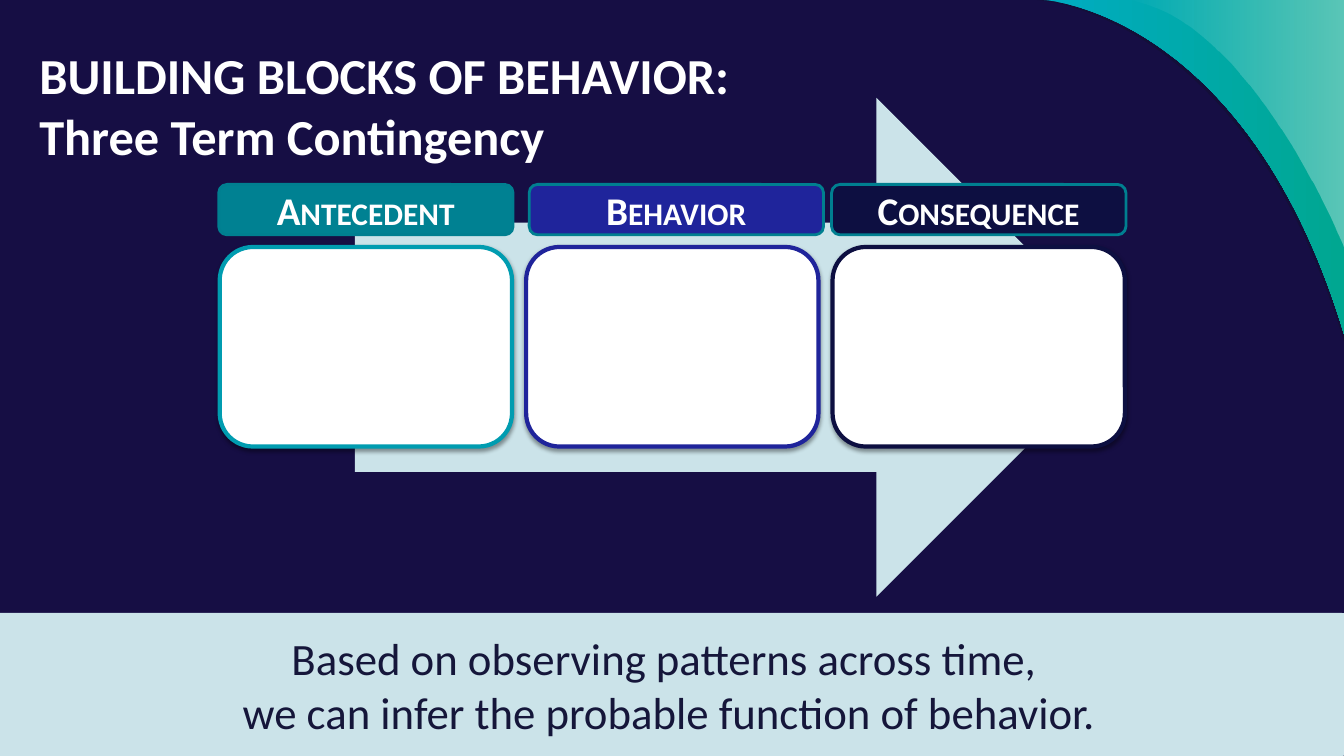
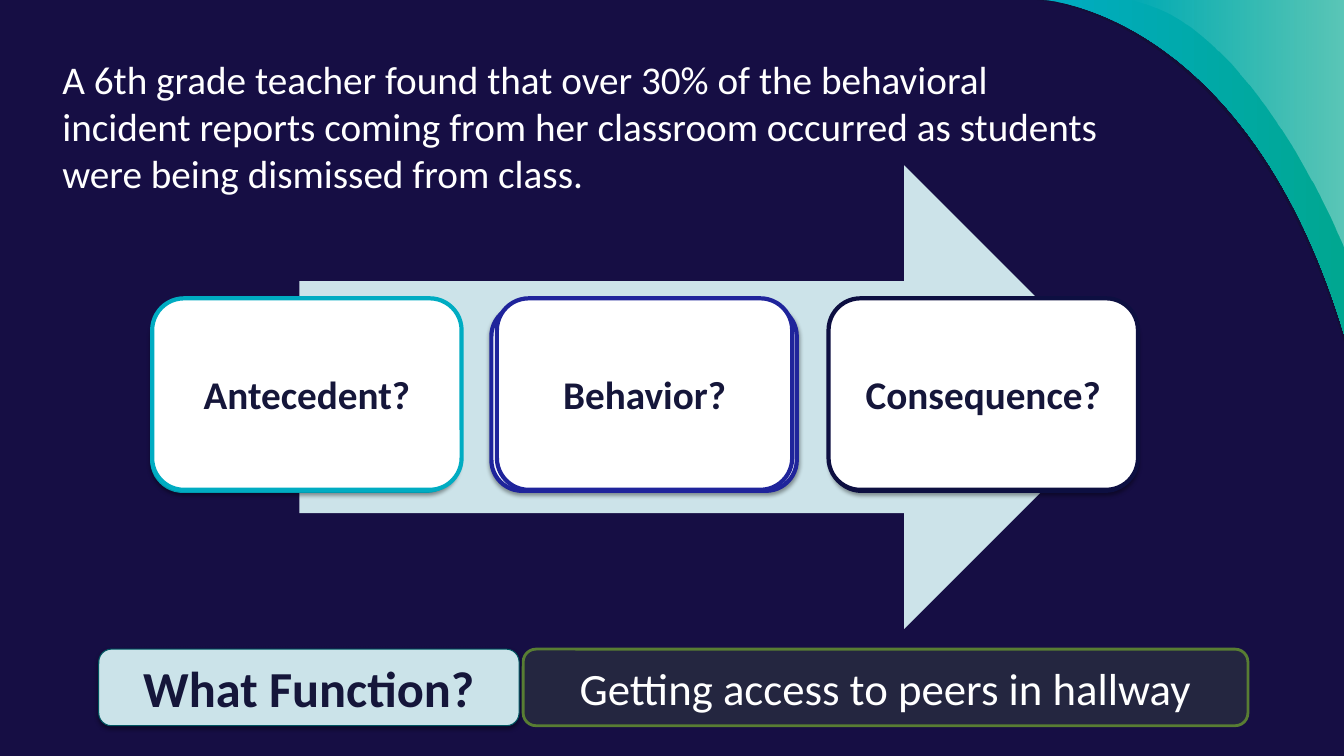
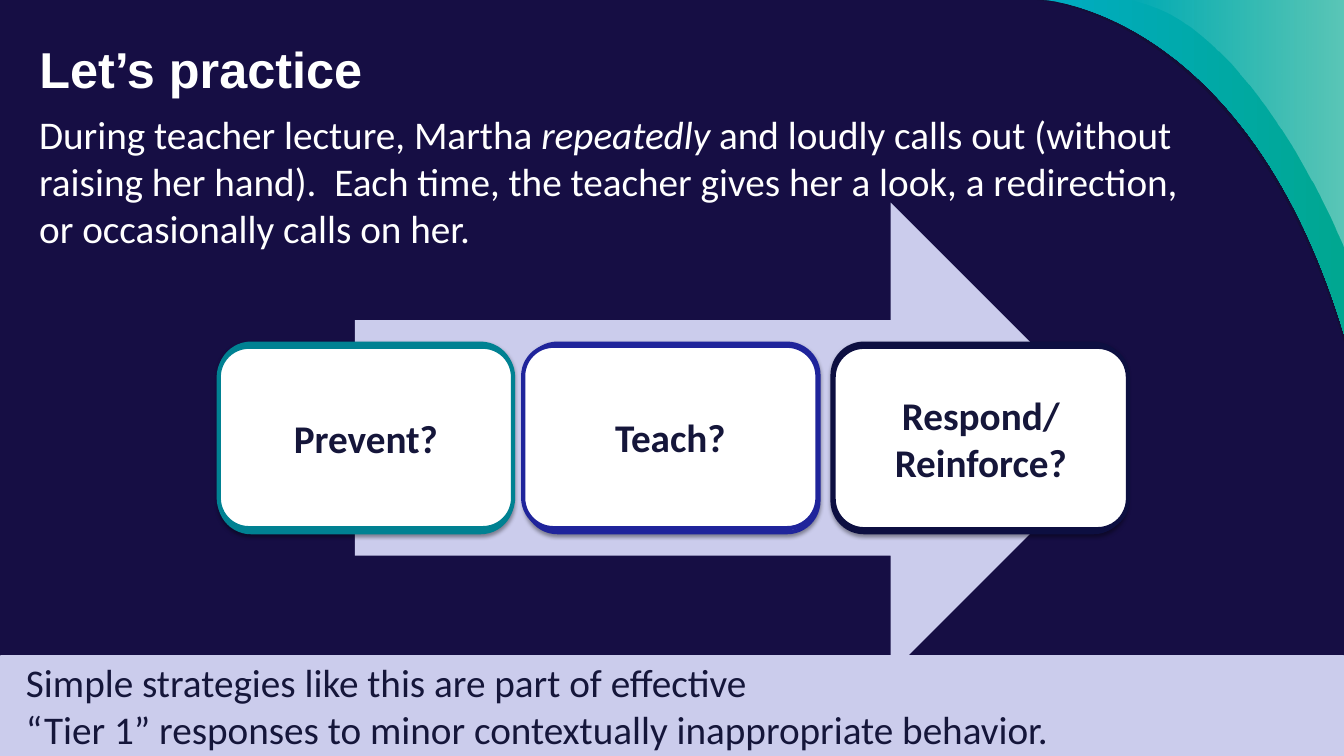
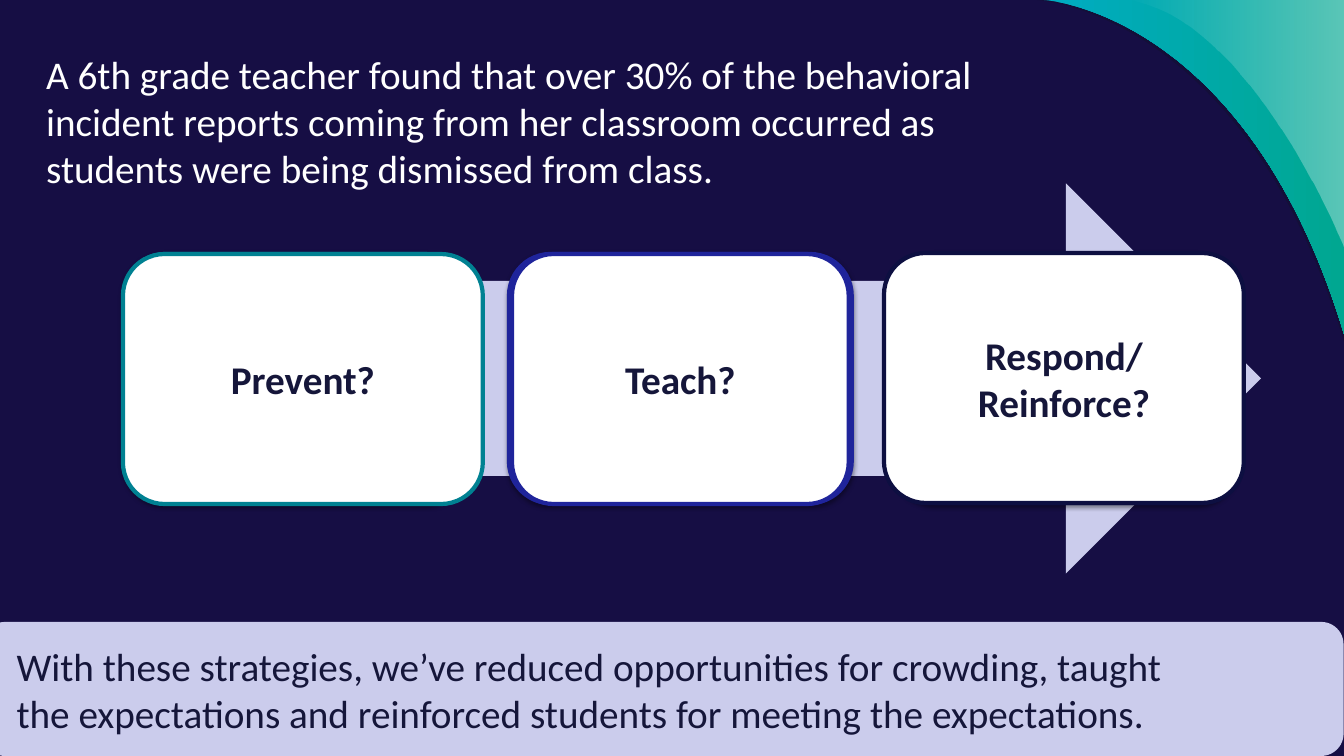
from dataclasses import dataclass

from lxml.etree import SubElement
from pptx import Presentation
from pptx.dml.color import RGBColor
from pptx.enum.shapes import MSO_SHAPE as Shape
from pptx.enum.text import MSO_ANCHOR as Anchor, MSO_AUTO_SIZE as AutoSize, PP_ALIGN as Align
from pptx.oxml.ns import qn
from pptx.util import Pt

PX = 9144  # EMU in one px, 100 px to the inch
WIDTH, HEIGHT = 1333.33, 750
TITLE_ONLY, BLANK = 5, 6


@dataclass(frozen=True)
class TextStyle:
    size: int
    color: str
    bold: bool = False
    font: str = "Calibri"
    small_caps: bool = False


class Theme:
    night, ink, white, black = "160E44", "15163A", "FFFFFF", "000000"
    aqua, sea, teal, teal_edge = "00ACC2", "009CB0", "008192", "007F90"
    green, blue, navy = "00A791", "1F249B", "0D0F41"
    ice, ice_arrow, lilac = "CBE3E9", "CCE3E9", "CBCCEC"
    pine, moss, curve_shade = "005661", "587D33", "12102F"

    title = TextStyle(36, white, bold=True)
    plain_title = TextStyle(36, white, bold=True, font="Arial")
    scenario = TextStyle(28, white)
    card = TextStyle(28, ink, bold=True)
    heading = TextStyle(28, white, bold=True, small_caps=True)
    question = TextStyle(36, ink, bold=True)
    answer = TextStyle(32, white)
    summary = TextStyle(32, ink)
    note = TextStyle(28, ink)


# Corner swoosh: four Bezier points, then (color, opacity in percent) per gradient stop
CURVES = [
    ([(WIDTH, 339), (1235, 11), (1029, 0), (1029, 0)], [(Theme.curve_shade, 54)]),
    ([(WIDTH, 331), (1237, 11), (1036, 0), (1036, 0)], [(Theme.aqua, 100), (Theme.green, 100)]),
    ([(WIDTH, 245), (WIDTH, 245), (1241, 15), (1116, 0)], [(Theme.white, 0), (Theme.white, 36)]),
]

DISMISSAL = ("A 6th grade teacher found that over 30% of the behavioral incident reports coming "
             "from her classroom occurred as students were being dismissed from class.")
LECTURE = ("During teacher lecture, Martha *repeatedly *and loudly calls out (without raising her "
           "hand).  Each time, the teacher gives her a look, a redirection, or occasionally calls "
           "on her.")
STRATEGIES = [["Prevent?"], ["Teach?"], ["Respond/", "Reinforce?"]]

# Rectangles are (left, top, width, height); "cards" is the first card and the step to the next.
# Boxes are dicts of place, lines, style, fill and optional edge, shadow and so on.
SLIDES = [
    dict(
        title=dict(place=(29, 33, 814, 92), margin=11, style=Theme.title,
                   text="BUILDING BLOCKS OF BEHAVIOR:\vThree Term Contingency"),
        arrow=((352, 97, 765, 495), Theme.ice),
        cards=((218, 245, 290, 198), 304),
        edges=[Theme.sea, Theme.blue, Theme.navy],
        boxes=[
            dict(place=(-25, 608, 1378, 142), fill=Theme.ice, style=Theme.summary,
                 lines=["Based on observing patterns across time, ",
                        "we can infer the probable function of behavior."]),
            *(dict(place=(left, 183, 292, 50), lines=[term], style=Theme.heading,
                   fill=fill, edge=Theme.teal_edge, weight=2)
              for left, term, fill in [(217, "Antecedent", Theme.teal),
                                       (525, "Behavior", Theme.blue),
                                       (825, "Consequence", Theme.navy)]),
        ],
    ),
    dict(
        scenario=((52, 50, 1048, 151), DISMISSAL),
        arrow=((297, 164, 830, 460), Theme.ice_arrow),
        cards=((151, 303, 303, 184), 336.5),
        edges=[Theme.sea, Theme.blue, Theme.navy],
        fronts=[(151, 296, 307, 190), (493, 296, 293, 190), (822, 296, 307, 190)],
        front_edges=[Theme.aqua, Theme.blue, Theme.navy],
        labels=[["Antecedent?"], ["Behavior?"], ["Consequence?"]],
        boxes=[
            dict(place=(98, 644, 417, 76), lines=["What Function?"], style=Theme.question,
                 fill=Theme.ice, edge=Theme.pine, weight=0.75, shadow=True),
            dict(place=(519, 644, 719, 76), lines=["Getting access to peers in hallway"],
                 style=Theme.answer, fill=Theme.moss, opacity=22, edge=Theme.moss, weight=2),
        ],
    ),
    dict(
        title=dict(place=(29, 33, 667, 71), margin=5, style=Theme.plain_title,
                   text="Let’s practice"),
        scenario=((29, 104, 1164, 151), LECTURE),
        arrow=((352, 201, 765, 467), Theme.lilac),
        cards=((218, 341, 290, 187), 304),
        edges=[Theme.teal, Theme.blue, Theme.navy],
        fronts=[(217, 344, 292, 180), (519, 343, 292, 181), (827, 344, 292, 181)],
        labels=STRATEGIES,
        boxes=[
            dict(place=(-15, 650, 1364, 100), fill=Theme.lilac, style=Theme.note,
                 align=Align.LEFT, margin=36,
                 lines=["Simple strategies like this are part of effective",
                        "“Tier 1” responses to minor contextually inappropriate behavior."]),
        ],
    ),
    dict(
        scenario=((36, 45, 993, 151), DISMISSAL),
        arrow=((272, 182, 979, 387), Theme.lilac),
        cards=((123, 252, 340, 247), 382),
        edges=[Theme.teal, Theme.blue, Theme.navy],
        fronts=[(122, 252, 357, 248), (508, 252, 334, 248), (877, 251, 357, 248)],
        labels=STRATEGIES,
        boxes=[
            dict(place=(-17, 617, 1350, 133), fill=Theme.lilac, style=Theme.note,
                 align=Align.LEFT, margin=27,
                 lines=["With these strategies, we’ve reduced opportunities for crowding, taught",
                        "the expectations and reinforced students for meeting the expectations."]),
        ],
    ),
]


def emu(lengths):
    return [round(length * PX) for length in lengths]


def rgb(code):
    return RGBColor.from_string(code)


def set_opacity(color_element, percent):
    SubElement(color_element, qn("a:alpha"), val=str(percent * 1000))


def write(frame, lines, style, align=Align.LEFT, anchor=Anchor.TOP):
    """Fill a text frame; text between asterisks is italic."""
    frame.word_wrap = True
    frame.auto_size = AutoSize.NONE
    frame.vertical_anchor = anchor
    for index, line in enumerate(lines):
        para = frame.add_paragraph() if index else frame.paragraphs[0]
        pieces = line.split("*")
        if len(pieces) == 1:
            para.text = line
        else:
            for number, piece in enumerate(pieces):
                span = para.add_run()
                span.text = piece
                if number % 2:
                    span.font.italic = True
        para.alignment = align
        font = para.font
        font.name, font.size, font.bold = style.font, Pt(style.size), style.bold
        font.color.rgb = rgb(style.color)


def add_shadow(shape):
    effects = shape.element.spPr.find(qn("a:effectLst"))
    shadow = SubElement(effects, qn("a:outerShdw"), blurRad=str(Pt(3.1)), dist=str(Pt(1.6)),
                        dir="5400000", rotWithShape="0")
    set_opacity(SubElement(shadow, qn("a:srgbClr"), val=Theme.black), 38)


def add_block(slide, kind, place, fill, edge=None, weight=3, shadow=False, opacity=100):
    shape = slide.shapes.add_shape(kind, *emu(place))
    shape.shadow.inherit = False
    shape.fill.solid()
    shape.fill.fore_color.rgb = rgb(fill)
    if opacity < 100:
        set_opacity(next(shape.element.spPr.iter(qn("a:srgbClr"))), opacity)
    if edge:
        shape.line.color.rgb = rgb(edge)
        shape.line.width = Pt(weight)
    else:
        shape.line.fill.background()
    if shadow:
        add_shadow(shape)
    return shape


def add_box(slide, place, lines, style, fill, align=Align.CENTER, margin=10, **look):
    box = add_block(slide, Shape.ROUNDED_RECTANGLE, place, fill, **look)
    box.text_frame.margin_left = margin * PX
    write(box.text_frame, lines, style, align, Anchor.MIDDLE)
    if style.small_caps:
        for properties in box.element.iter(qn("a:defRPr")):
            properties.set("cap", "small")


def bend(shape):
    """Turn the first three straight segments of a freeform into one cubic curve."""
    segments = list(shape.element.iter(qn("a:lnTo")))[:3]
    cubic = SubElement(segments[0].getparent(), qn("a:cubicBezTo"))
    segments[0].addprevious(cubic)
    for segment in segments:
        cubic.append(segment[0])
        segment.getparent().remove(segment)


def add_swoosh(master, slide):
    """Draw the corner curves on a slide, then move them to the master."""
    for index, (points, stops) in enumerate(CURVES):
        start, *rest = [emu(point) for point in [*points, (WIDTH, 0)]]
        builder = slide.shapes.build_freeform(*start)
        builder.add_line_segments(rest, close=True)
        curve = builder.convert_to_shape()
        bend(curve)
        curve.shadow.inherit = False
        curve.line.fill.background()
        if len(stops) == 1:
            curve.fill.solid()
            curve.fill.fore_color.rgb = rgb(stops[0][0])
        else:
            curve.fill.gradient()
            curve.fill.gradient_angle = 0
            for stop, (color, _) in zip(curve.fill.gradient_stops, stops):
                stop.color.rgb = rgb(color)
        for element, (_, percent) in zip(curve.element.spPr.findall(".//" + qn("a:srgbClr")), stops):
            set_opacity(element, percent)
        next(curve.element.iter(qn("p:cNvPr"))).set("id", str(20 + index))
        master.shapes.element.append(curve.element)


def add_title(slide, place, text, style, margin):
    title = slide.shapes.title
    title.left, title.top, title.width, title.height = emu(place)
    title.text_frame.margin_top = margin * PX
    write(title.text_frame, [text], style)


def add_cards(slide, content):
    (left, top, width, height), step = content["cards"]
    for index, edge in enumerate(content["edges"]):
        add_block(slide, Shape.ROUNDED_RECTANGLE, (left + index * step, top, width, height),
                  Theme.white, edge, shadow=True)
    front_edges = content.get("front_edges", content["edges"])
    for place, lines, edge in zip(content.get("fronts", []), content.get("labels", []), front_edges):
        add_box(slide, place, lines, Theme.card, Theme.white, edge=edge)


def add_slide(deck, content):
    layout = TITLE_ONLY if "title" in content else BLANK
    slide = deck.slides.add_slide(deck.slide_layouts[layout])
    add_block(slide, Shape.RIGHT_ARROW, *content["arrow"])
    add_cards(slide, content)
    for box in content["boxes"]:
        add_box(slide, **box)
    if "title" in content:
        add_title(slide, **content["title"])
    if "scenario" in content:
        place, text = content["scenario"]
        write(slide.shapes.add_textbox(*emu(place)).text_frame, [text], Theme.scenario)
    return slide


def main():
    deck = Presentation()
    deck.slide_width, deck.slide_height = emu((WIDTH, HEIGHT))
    background = deck.slide_master.background.fill
    background.solid()
    background.fore_color.rgb = rgb(Theme.night)
    slides = [add_slide(deck, content) for content in SLIDES]
    add_swoosh(deck.slide_master, slides[0])
    deck.save("out.pptx")


if __name__ == "__main__":
    main()
